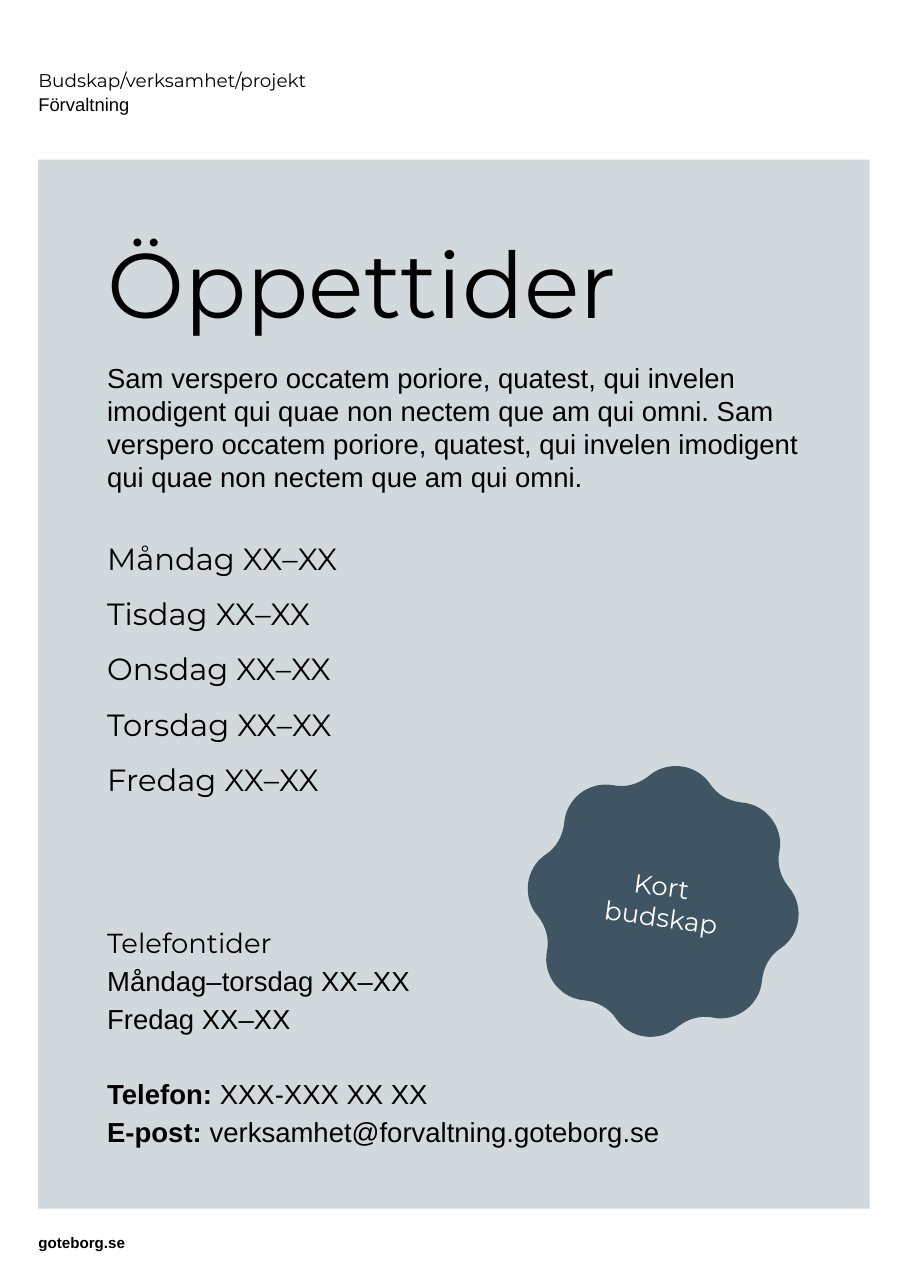
from math import cos, pi, radians, sin

from lxml import etree
from pptx import Presentation
from pptx.dml.color import RGBColor
from pptx.enum.shapes import MSO_SHAPE
from pptx.enum.text import MSO_ANCHOR, MSO_AUTO_SIZE, PP_ALIGN
from pptx.oxml.ns import qn
from pptx.util import Inches, Pt

RECTANGLE = MSO_SHAPE.RECTANGLE
TOP, MIDDLE = MSO_ANCHOR.TOP, MSO_ANCHOR.MIDDLE
LEFT, CENTER = PP_ALIGN.LEFT, PP_ALIGN.CENTER
NO_FIT = MSO_AUTO_SIZE.NONE

PAGE_WIDTH, PAGE_HEIGHT = Inches(11.69), Inches(16.53)

# Left edges and widths in percent of the page width
MARGIN, PANEL_WIDTH = 4.2, 91.27
COLUMN, COLUMN_WIDTH = 11.76, 76.48


class Theme:
    panel, badge = "D1D9DC", "3F5564"
    ink, light = "000000", "FFFFFF"
    display, text = "Montserrat", "Arial"
    title_size, hours_size, body_size = 84.8, 28.3, 25.4
    badge_size, header_size, footer_size = 24, 17, 14
    body_line, header_line, title_line = Pt(30.5), Pt(22), 0.9
    hours_gap, contact_gap = 17, 4.4
    section_gap = 38.9


# One lobe of the tilted badge: two Bezier curves, in inches from its centre
LOBE_START = (-0.64, -1.49)
LOBE_CURVES = (
    ((-0.95, -1.55), (-1.25, -1.32), (-1.27, -1.0)),
    ((-1.29, -0.84), (-1.37, -0.69), (-1.51, -0.6)),
)
LOBE_COUNT, BADGE_TILT, BADGE_SIZE = 8, 7.6, Inches(3.5)


def share(left, top, width, height):
    """Turn percentages of the page into a box."""
    return (int(PAGE_WIDTH * left / 100), int(PAGE_HEIGHT * top / 100),
            int(PAGE_WIDTH * width / 100), int(PAGE_HEIGHT * height / 100))


def apply(target, formats):
    for name, value in formats.items():
        setattr(target, name, value)


def paint(shape, color):
    shape.shadow.inherit = False
    shape.fill.solid()
    shape.fill.fore_color.rgb = RGBColor.from_string(color)
    shape.line.fill.background()


def set_frame(frame, anchor=TOP, inset_x=0, inset_y=0):
    apply(frame, {
        "word_wrap": True, "auto_size": NO_FIT, "vertical_anchor": anchor,
        "margin_left": Inches(inset_x), "margin_right": Inches(inset_x),
        "margin_top": Inches(inset_y), "margin_bottom": Inches(inset_y),
    })


def add_run(paragraph, words, size, font=Theme.text, color=Theme.ink, bold=False):
    run = paragraph.add_run()
    run.text = words
    apply(run.font, {"name": font, "size": Pt(size), "bold": bold})
    run.font.color.rgb = RGBColor.from_string(color)


def write(frame, lines, size, line=None, gap=0, align=LEFT):
    """Write lines of (runs, extra gap), each run a (words, style) pair."""
    for index, (runs, own_gap) in enumerate(lines):
        paragraph = frame.add_paragraph() if index else frame.paragraphs[0]
        space = (own_gap or gap) if index else 0
        apply(paragraph, {"alignment": align, "space_before": Pt(space),
                          "line_spacing": line})
        for words, style in runs:
            add_run(paragraph, words, size, **style)


def add_text(slide, box, lines, size, anchor=TOP, **layout):
    frame = slide.shapes.add_textbox(*share(*box)).text_frame
    set_frame(frame, anchor)
    write(frame, lines, size, **layout)


def add_panel(slide):
    panel = slide.shapes.add_shape(
        RECTANGLE, *share(MARGIN, 12.4, PANEL_WIDTH, 81.45))
    paint(panel, Theme.panel)


def place_title(slide, words):
    title = slide.shapes.title
    # Bring the title in front of the panel
    title.element.getparent().append(title.element)
    box = share(COLUMN, 16.76, COLUMN_WIDTH, 11.31)
    apply(title, dict(zip(("left", "top", "width", "height"), box)))
    set_frame(title.text_frame, MIDDLE)
    write(title.text_frame, [([(words, {"font": Theme.display})], 0)],
          Theme.title_size, line=Theme.title_line)


def add_step(outline, tag, points, turn):
    """Add one outline step, its points turned around the badge centre."""
    step = etree.SubElement(outline, qn(tag))
    for x, y in points:
        across = BADGE_SIZE // 2 + Inches(x * cos(turn) - y * sin(turn))
        down = BADGE_SIZE // 2 + Inches(x * sin(turn) + y * cos(turn))
        etree.SubElement(step, qn("a:pt"), x=str(across), y=str(down))


def draw_lobes(badge):
    outline = badge.element.find(".//" + qn("a:path"))
    for corner in list(outline):
        outline.remove(corner)
    upright = -radians(BADGE_TILT)
    add_step(outline, "a:moveTo", [LOBE_START], upright)
    for lobe in range(LOBE_COUNT):
        for curve in LOBE_CURVES:
            add_step(outline, "a:cubicBezTo", curve,
                     upright - 2 * pi * lobe / LOBE_COUNT)
    etree.SubElement(outline, qn("a:close"))


def add_badge(slide, center_x, center_y, lines):
    x, y, _, _ = share(center_x, center_y, 0, 0)
    left, top = x - BADGE_SIZE // 2, y - BADGE_SIZE // 2
    right, bottom = left + BADGE_SIZE, top + BADGE_SIZE
    builder = slide.shapes.build_freeform(left, top)
    builder.add_line_segments([(right, top), (right, bottom), (left, bottom)])
    badge = builder.convert_to_shape()
    draw_lobes(badge)
    paint(badge, Theme.badge)
    badge.rotation = BADGE_TILT
    set_frame(badge.text_frame, MIDDLE, 0.28, 0.08)
    paragraph = badge.text_frame.paragraphs[0]
    paragraph.alignment = CENTER
    for index, words in enumerate(lines):
        if index:
            paragraph.add_line_break()
        add_run(paragraph, words, Theme.badge_size, Theme.display, Theme.light)


def main():
    deck = Presentation()
    deck.slide_width, deck.slide_height = PAGE_WIDTH, PAGE_HEIGHT
    slide = deck.slides.add_slide(deck.slide_layouts[5])
    plain, bold, display = {}, {"bold": True}, {"font": Theme.display}

    # Panel, title and introduction
    add_panel(slide)
    place_title(slide, "Öppettider")
    intro = ("Sam verspero occatem poriore, quatest, qui invelen imodigent "
             "qui quae non nectem que am qui omni. Sam verspero occatem "
             "poriore, quatest, qui invelen imodigent qui quae non nectem "
             "que am qui omni.")
    add_text(slide, (COLUMN, 28, COLUMN_WIDTH, 11.98),
             [([(intro, plain)], 0)], Theme.body_size, line=Theme.body_line)

    # Opening hours
    days = ("Måndag", "Tisdag", "Onsdag", "Torsdag", "Fredag")
    add_text(slide, (COLUMN, 41.92, COLUMN_WIDTH, 28.07),
             [([(f"{day} XX–XX", display)], 0) for day in days],
             Theme.hours_size, gap=Theme.hours_gap)

    # Telephone hours and contact details
    contacts = [
        ([("Telefontider", display)], 0),
        ([("Måndag–torsdag XX–XX", plain)], 0),
        ([("Fredag XX–XX", plain)], 0),
        ([("Telefon: ", bold), ("XXX-XXX XX XX", plain)], Theme.section_gap),
        ([("E-post: ", bold), ("verksamhet@forvaltning.goteborg.se", plain)], 0),
    ]
    add_text(slide, (COLUMN, 71.93, COLUMN_WIDTH, 17.48), contacts,
             Theme.body_size, line=Theme.body_line, gap=Theme.contact_gap)

    # Short message
    add_badge(slide, 72.8, 69.99, ("Kort ", "budskap"))

    # Header and footer
    add_text(slide, (MARGIN, 5.62, 66.72, 2.9),
             [([("Budskap/verksamhet/projekt", display)], 0),
              ([("Förvaltning", plain)], 0)],
             Theme.header_size, anchor=MIDDLE, line=Theme.header_line)
    add_text(slide, (MARGIN, 95.77, 62.7, 1.45),
             [([("goteborg.se", bold)], 0)], Theme.footer_size, anchor=MIDDLE)

    deck.save("out.pptx")


if __name__ == "__main__":
    main()
